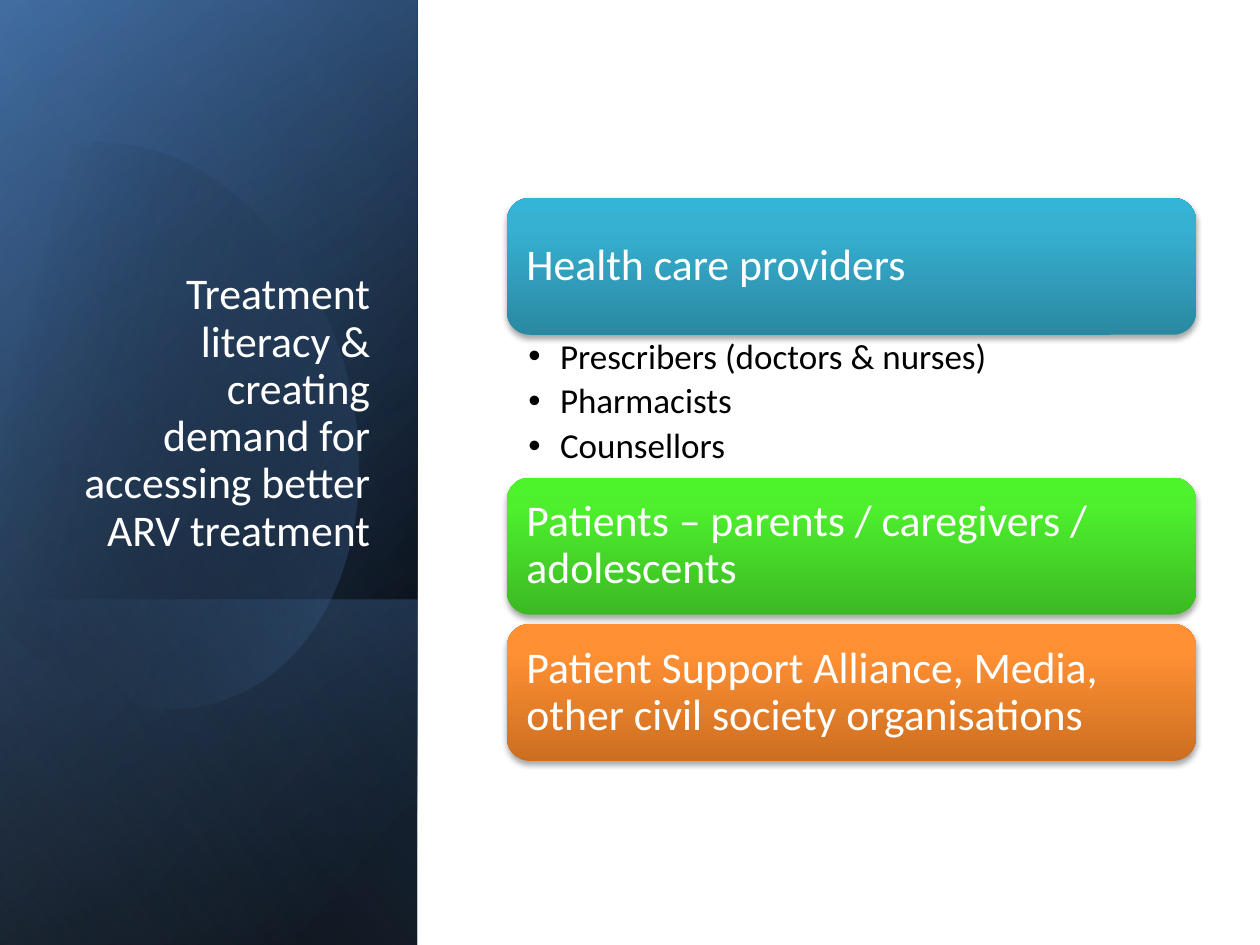
import math
from lxml import etree
from pptx import Presentation
from pptx import util as u
from pptx.dml.color import RGBColor
from pptx.enum import shapes, text
from pptx.oxml import ns

FONT = "Calibri"
TITLE = "Treatment literacy & creating demand for accessing better ARV treatment"
CARDS = [
    ("Health care providers", ("2A88A2", "37B1D2", "34B4D6"),
     ["Prescribers (doctors & nurses)", "Pharmacists", "Counsellors"]),
    ("Patients – parents / caregivers / adolescents", ("3CB923", "4EF02E", "4CF52A"), []),
    ("Patient Support Alliance, Media, other civil society organisations",
     ("CC6E20", "FF9034", "FF9136"), []),
]


def rgb(value):
    return RGBColor.from_string(value)


def child(parent, tag, **attrs):
    return etree.SubElement(parent, ns.qn(tag), {k: str(v) for k, v in attrs.items()})


def add_color(parent, value, alpha):
    clr = child(parent, "a:srgbClr", val=value)
    if alpha < 100:
        child(clr, "a:alpha", val=alpha * 1000)


def gradient(sp, stops, angle):
    sp.shadow.inherit = False
    sp.line.fill.background()
    sp.fill.background()
    pr = sp.element.spPr
    grad = child(pr, "a:gradFill", rotWithShape=1)
    gs_list = child(grad, "a:gsLst")
    for pos, value, alpha in stops:
        add_color(child(gs_list, "a:gs", pos=pos * 1000), value, alpha)
    child(grad, "a:lin", ang=angle * 60000, scaled=0)
    pr.replace(pr.find(ns.qn("a:noFill")), grad)


def shadow(sp):
    effects = sp.element.spPr.find(ns.qn("a:effectLst"))
    outer = child(effects, "a:outerShdw", blurRad=u.Pt(3.1), dist=u.Pt(1.8),
                  dir=90 * 60000, rotWithShape=0)
    add_color(outer, "000000", 35)


def set_frame(tf, anchor, left, top, right, bottom):
    tf.word_wrap = True
    tf.auto_size = text.MSO_AUTO_SIZE.NONE
    tf.vertical_anchor = anchor
    tf.margin_left, tf.margin_top = u.Cm(left), u.Cm(top)
    tf.margin_right, tf.margin_bottom = u.Cm(right), u.Cm(bottom)


def write(p, words, size, color, align=text.PP_ALIGN.LEFT):
    p.alignment = align
    p.line_spacing = 0.9
    r = p.add_run()
    r.text = words
    r.font.name, r.font.size = FONT, u.Pt(size)
    r.font.color.rgb = rgb(color)


def add_panel(s, x, y, w, h, stops, angle):
    sp = s.shapes.add_shape(shapes.MSO_SHAPE.RECTANGLE, u.Cm(x + (w - h) / 2),
                            u.Cm(y + (h - w) / 2), u.Cm(h), u.Cm(w))
    sp.rotation = 90
    sp.element.spPr.xfrm.set("flipH", "1")
    gradient(sp, stops, angle)


def bezier(a, b, c, d, steps=24):
    for i in range(1, steps + 1):
        t = i / steps
        k = ((1 - t) ** 3, 3 * t * (1 - t) ** 2, 3 * t * t * (1 - t), t ** 3)
        yield tuple(sum(f * q[n] for f, q in zip(k, (a, b, c, d))) for n in (0, 1))


def add_disc(s, x, y, w, h):
    rotation = 343.9
    curves = [
        [(3.48, 0.21), (5.38, 0.41), (7.24, 2.19), (7.97, 4.68)],
        [(7.97, 4.68), (8.84, 7.77), (7.69, 10.8), (5.38, 11.46)],
        [(5.38, 11.46), (3.94, 11.89), (2.39, 11.28), (1.22, 10.01)],
        [(0.66, 1.22), (1.09, 0.79), (1.6, 0.49), (2.18, 0.31)],
        [(2.18, 0.31), (2.61, 0.18), (3.05, 0.15), (3.48, 0.21)],
    ]
    pts = [curves[0][0]]
    for curve in curves[:3]:
        pts += bezier(*curve)
    pts += [(0.96, 9.71), (0.4, 1.53), (0.66, 1.22)]
    for curve in curves[3:]:
        pts += bezier(*curve)
    co, si = math.cos(math.radians(-rotation)), math.sin(math.radians(-rotation))
    turned = [(u.Cm(x + w / 2 + (px - w / 2) * co - (py - h / 2) * si),
               u.Cm(y + h / 2 + (px - w / 2) * si + (py - h / 2) * co)) for px, py in pts]
    fb = s.shapes.build_freeform(*turned[0])
    fb.add_line_segments(turned[1:], close=True)
    sp = fb.convert_to_shape()
    sp.rotation = rotation
    gradient(sp, [(29, "000000", 0), (100, "4F81BD", 43)], 30)


def add_title(s, x, y, w, h):
    sp = s.shapes.title
    sp.element.getparent().append(sp.element)
    sp.left, sp.top, sp.width, sp.height = (u.Cm(v) for v in (x, y, w, h))
    set_frame(sp.text_frame, text.MSO_ANCHOR.BOTTOM, 0.25, 0.13, 0.25, 0.13)
    write(sp.text_frame.paragraphs[0], TITLE, 25, "FFFFFF", text.PP_ALIGN.RIGHT)


def add_sidebar(s, x, y, w, h):
    add_panel(s, x, y, w, h, [(8, "000000", 100), (100, "376092", 100)], 50)
    add_panel(s, x, y, w, h, [(0, "000000", 0), (99, "4F81BD", 46)], 30)
    add_panel(s, x, y + h - 6.96, w, 6.96, [(2, "4F81BD", 29), (100, "000000", 30)], 130)
    add_disc(s, x - 1.04, y + 2.69, 8.13, 11.61)
    add_panel(s, x, y, w, h, [(0, "000000", 0), (99, "95B3D7", 11)], 120)
    add_title(s, x + 1.21, y + 4.68, 6.5, 6.65)


def add_card(group, x, y, w, h, words, colors):
    sp = group.shapes.add_shape(shapes.MSO_SHAPE.ROUNDED_RECTANGLE,
                                u.Cm(x), u.Cm(y), u.Cm(w), u.Cm(h))
    gradient(sp, [(pos, c, 100) for pos, c in zip((0, 80, 100), colors)], 270)
    shadow(sp)
    set_frame(sp.text_frame, text.MSO_ANCHOR.MIDDLE, 0.26, 0.26, 0.26, 0.26)
    write(sp.text_frame.paragraphs[0], words, 25, "FFFFFF")


def add_bullets(group, x, y, w, h, items):
    tf = group.shapes.add_textbox(u.Cm(x), u.Cm(y), u.Cm(w), u.Cm(h)).text_frame
    set_frame(tf, text.MSO_ANCHOR.TOP, 0.43, 0.08, 0.48, 0.08)
    for i, item in enumerate(items):
        p = tf.add_paragraph() if i else tf.paragraphs[0]
        write(p, item, 20, "000000")
        p.level = 1
        p.space_after = u.Pt(4)
        pr = p._p.get_or_add_pPr()
        pr.set("marL", str(u.Cm(0.64)))
        pr.set("indent", str(-u.Cm(0.64)))
        child(pr, "a:buFont", typeface="Arial")
        child(pr, "a:buChar", char="•")


def add_audiences(s, x, y, w):
    card_h, list_h, gap = 2.76, 2.88, 0.19
    group = s.shapes.add_group_shape()
    for words, colors, items in CARDS:
        add_card(group, x, y, w, card_h, words, colors)
        y += card_h
        if items:
            add_bullets(group, x, y, w, list_h, items)
        y += list_h if items else gap


def main():
    prs = Presentation()
    prs.slide_width, prs.slide_height = u.Cm(25.4), u.Cm(19.05)
    s = prs.slides.add_slide(prs.slide_layouts[5])
    add_sidebar(s, 0, 0, 8.41, 19.05)
    add_audiences(s, 10.22, 3.99, 13.89)
    prs.save("out.pptx")


if __name__ == "__main__":
    main()
